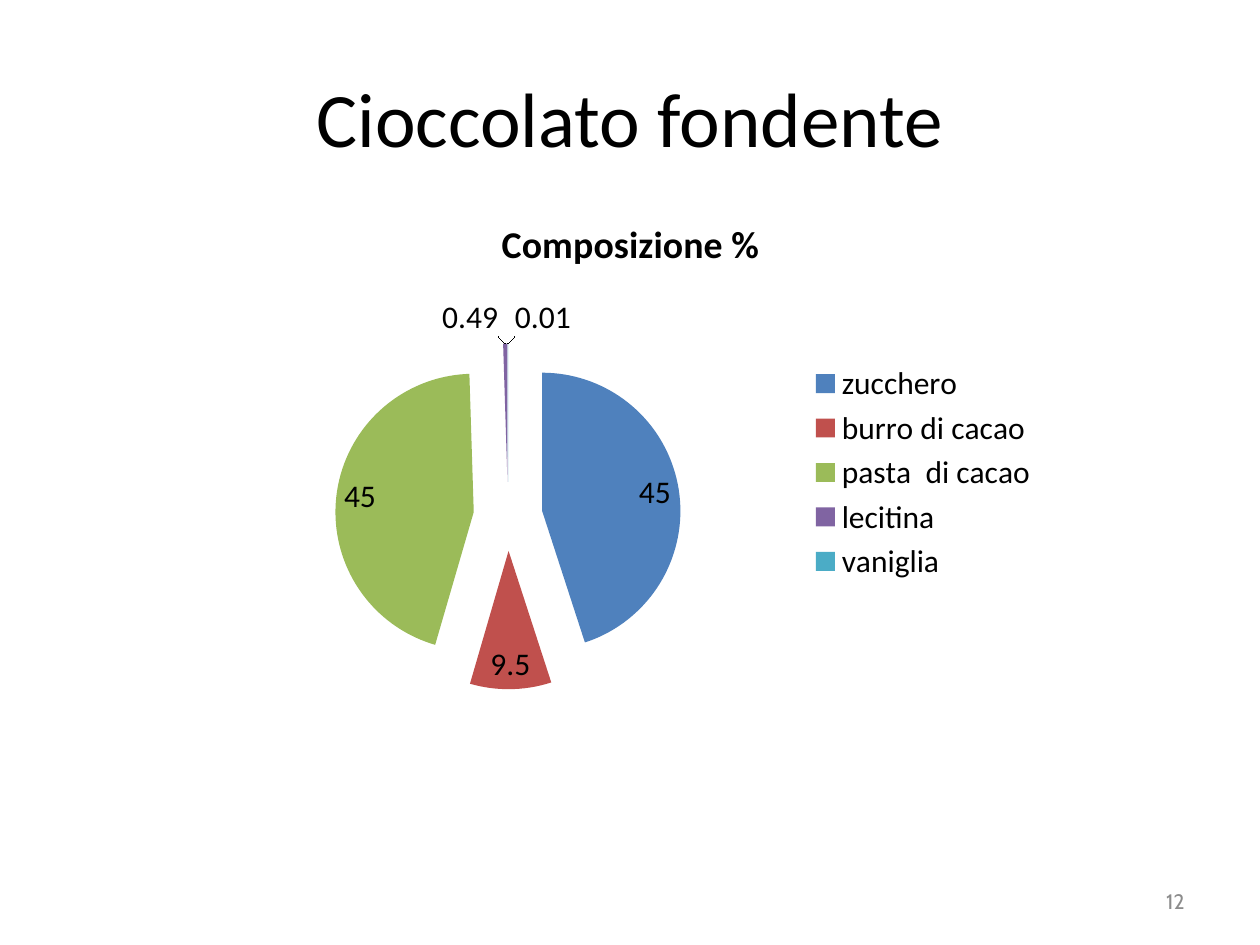
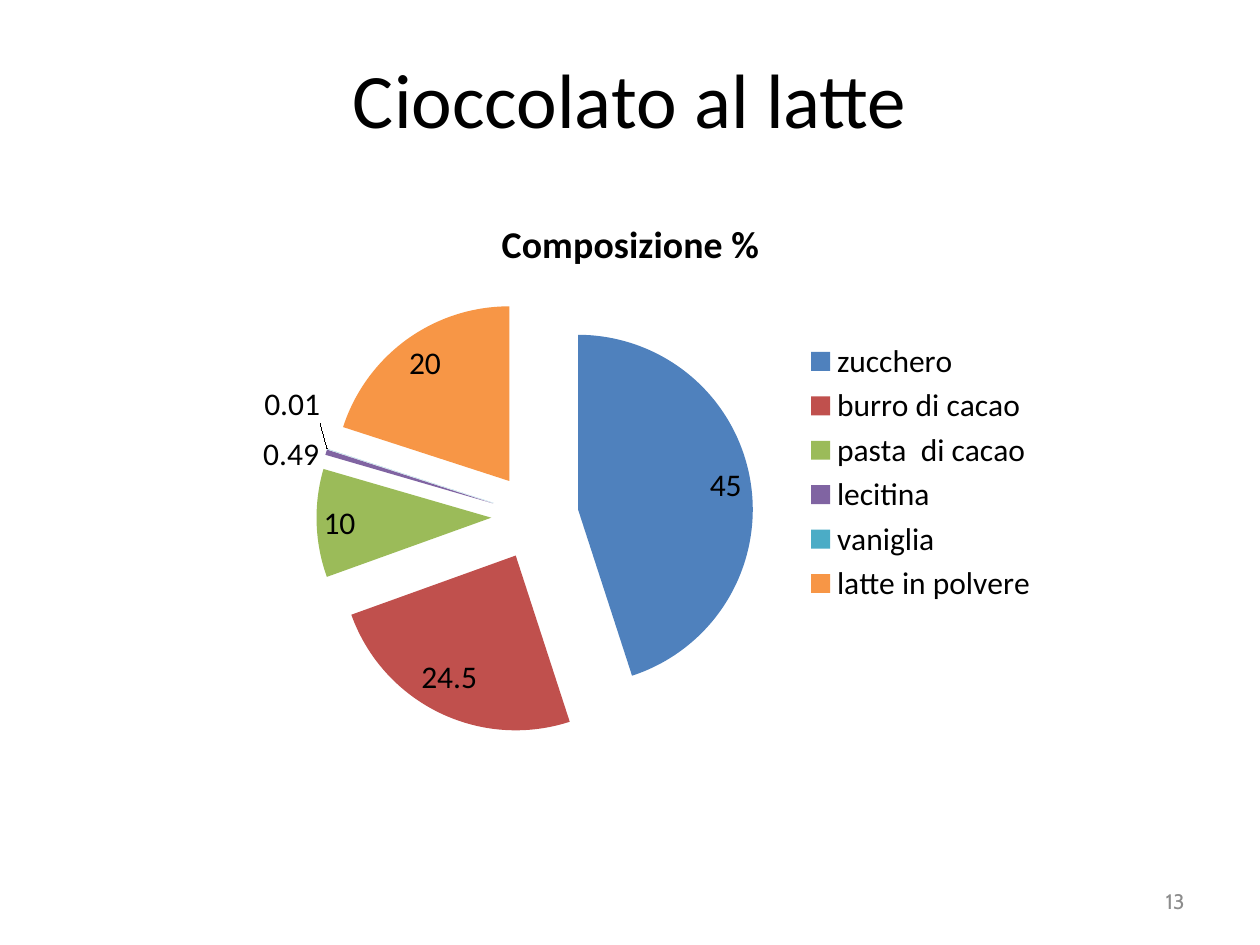
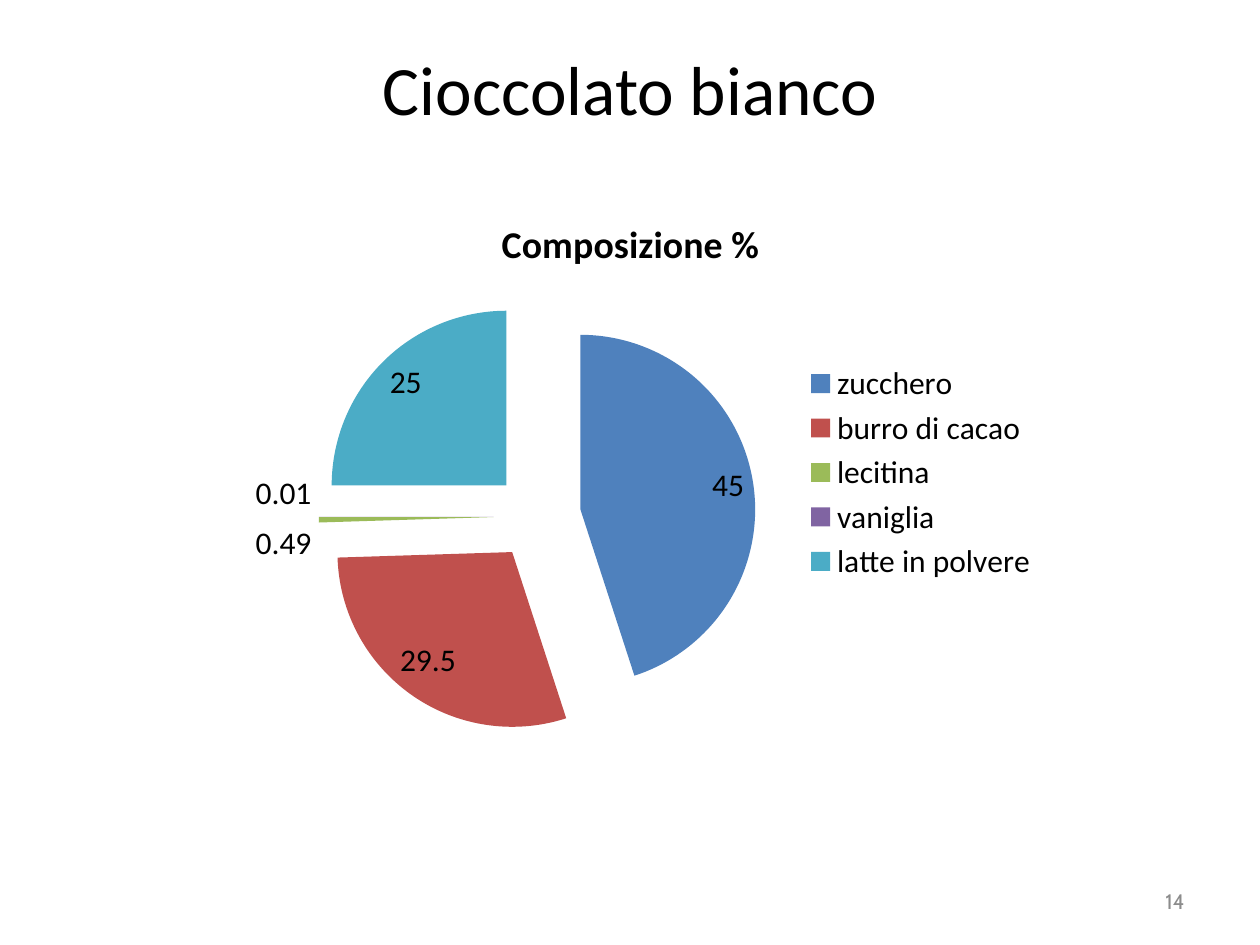
from lxml import etree
from pptx import Presentation
from pptx.chart.data import CategoryChartData
from pptx.dml.color import RGBColor
from pptx.enum import chart as charts, text
from pptx.oxml import ns
from pptx.util import Inches, Pt

CHART_TITLE = "Composizione %"
FIRST_NUMBER = 12
EXPLOSION = 25
BLACK, GREY = "000000", "8C8C8C"
SLICE_COLOURS = ["4F81BD", "C0504D", "9BBB59", "8064A2", "4BACC6", "F79646"]

CHOCOLATES = [
    {"title": "Cioccolato fondente", "height": 1.25, "size": 44,
     "recipe": {"zucchero": 45, "burro di cacao": 9.5, "pasta  di cacao": 45,
                "lecitina": 0.49, "vaniglia": 0.01}},
    {"title": "Cioccolato al latte", "height": 0.95, "size": 44,
     "recipe": {"zucchero": 45, "burro di cacao": 24.5, "pasta  di cacao": 10,
                "lecitina": 0.49, "vaniglia": 0.01, "latte in polvere": 20}},
    {"title": "Cioccolato bianco", "height": 0.79, "size": 39.6,
     "recipe": {"zucchero": 45, "burro di cacao": 29.5,
                "lecitina": 0.49, "vaniglia": 0.01, "latte in polvere": 25}},
]


def colour(value):
    return RGBColor.from_string(value)


def style_font(font, size, name="Calibri", fill=BLACK, bold=False):
    font.size = Pt(size)
    font.name = name
    font.bold = bold
    font.color.rgb = colour(fill)


def add_text(slide, words, box, alignment, size, **style):
    frame = slide.shapes.add_textbox(*map(Inches, box)).text_frame
    frame.word_wrap = True
    frame.vertical_anchor = text.MSO_ANCHOR.MIDDLE
    paragraph = frame.paragraphs[0]
    paragraph.text = words
    paragraph.alignment = alignment
    style_font(paragraph.font, size, **style)


def add_recipe_chart(slide, recipe):
    data = CategoryChartData()
    data.categories = list(recipe)
    data.add_series(CHART_TITLE, list(recipe.values()))
    box = map(Inches, (1.67, 1.53, 6.67, 4.44))
    chart = slide.shapes.add_chart(charts.XL_CHART_TYPE.PIE, *box, data).chart
    style_font(chart.font, 18)

    chart.has_title = True
    chart.chart_title.include_in_layout = False
    heading = chart.chart_title.text_frame.paragraphs[0]
    heading.text = CHART_TITLE
    style_font(heading.font, 21.6, bold=True)

    chart.has_legend = True
    chart.legend.position = charts.XL_LEGEND_POSITION.RIGHT
    chart.legend.include_in_layout = False

    plot = chart.plots[0]
    plot.vary_by_categories = True
    plot.has_data_labels = True
    plot.data_labels.show_value = True
    plot.data_labels.show_percentage = False

    series = plot.series[0]
    explosion = etree.Element(ns.qn("c:explosion"), val=str(EXPLOSION))
    series._element.find(ns.qn("c:tx")).addnext(explosion)
    for index, slice_colour in enumerate(SLICE_COLOURS[:len(recipe)]):
        fill = series.points[index].format.fill
        fill.solid()
        fill.fore_color.rgb = colour(slice_colour)


def main():
    presentation = Presentation()
    presentation.slide_width = Inches(10)
    presentation.slide_height = Inches(7.5)
    for number, chocolate in enumerate(CHOCOLATES, FIRST_NUMBER):
        slide = presentation.slides.add_slide(presentation.slide_layouts[6])
        add_text(slide, chocolate["title"], (0.5, 0.3, 9, chocolate["height"]),
                 text.PP_ALIGN.CENTER, chocolate["size"])
        add_text(slide, str(number), (7.17, 6.95, 2.33, 0.4),
                 text.PP_ALIGN.RIGHT, 12, name="Cabin", fill=GREY)
        add_recipe_chart(slide, chocolate["recipe"])
    presentation.save("out.pptx")


if __name__ == "__main__":
    main()
